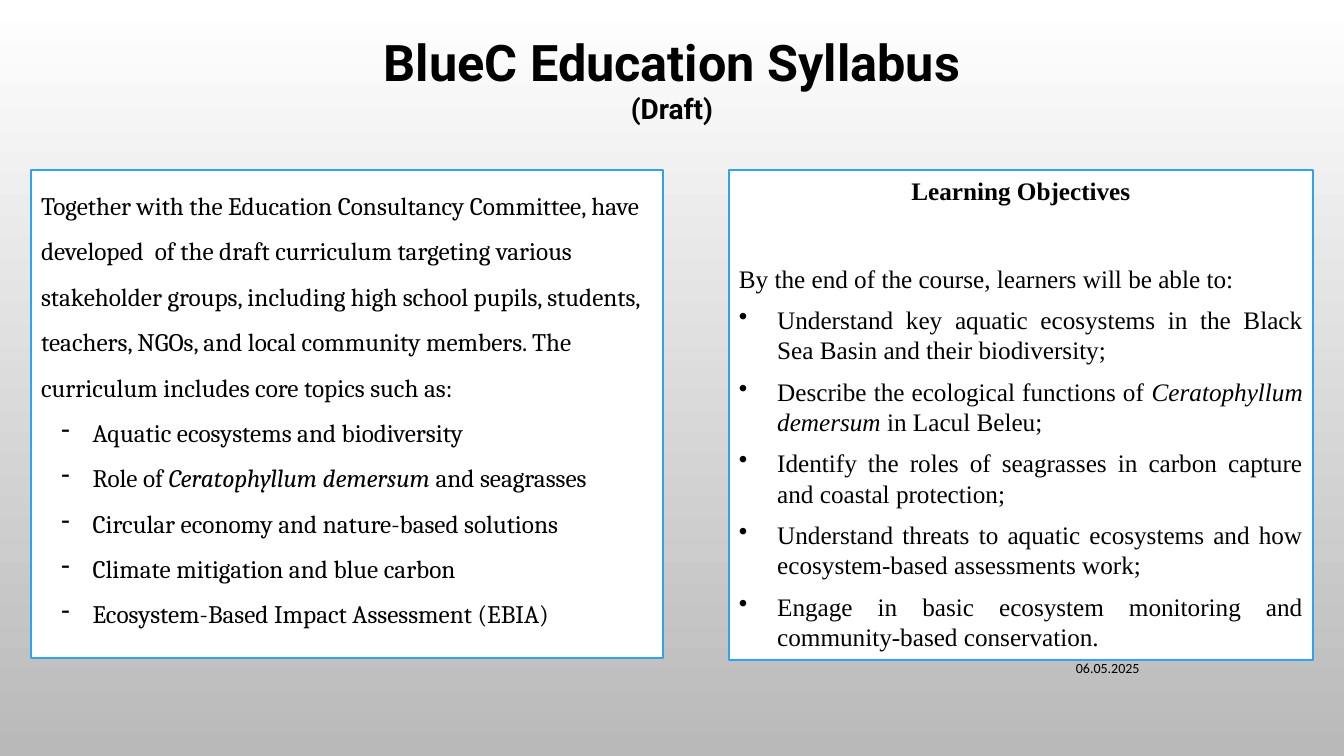
from lxml import etree
from pptx import Presentation
from pptx import util as u
from pptx.dml.color import RGBColor
from pptx.enum import shapes, text
from pptx.oxml.ns import qn

ALIGN = text.PP_ALIGN
TOPICS = [
    "Aquatic ecosystems and biodiversity",
    "Role of *Ceratophyllum demersum* and seagrasses",
    "Circular economy and nature-based solutions",
    "Climate mitigation and blue carbon",
    "Ecosystem-Based Impact Assessment (EBIA)",
]
OBJECTIVES = [
    "Understand key aquatic ecosystems in the Black Sea Basin and their biodiversity;",
    "Describe the ecological functions of *Ceratophyllum demersum* in Lacul Beleu;",
    "Identify the roles of seagrasses in carbon capture and coastal protection;",
    "Understand threats to aquatic ecosystems and how ecosystem-based assessments work;",
    "Engage in basic ecosystem monitoring and community-based conservation.",
]


def color(value):
    return RGBColor.from_string(value)


def place(left, top, width, height):
    return [u.Inches(length) for length in (left, top, width, height)]


def set_background(page, top, bottom):
    fill = page.background.fill
    fill.gradient()
    fill.gradient_angle = 270
    for stop, position, value in zip(fill.gradient_stops, (0, 1), (top, bottom)):
        stop.position = position
        stop.color.rgb = color(value)


def set_font(font, name, size, bold=False):
    font.name = name
    font.size = u.Pt(size)
    font.bold = bold
    font.color.rgb = color("000000")


def add_text_box(page, position, anchor=text.MSO_ANCHOR.TOP):
    frame = page.shapes.add_textbox(*place(*position)).text_frame
    frame.word_wrap = True
    frame.vertical_anchor = anchor
    return frame


def add_panel(page, position):
    panel = page.shapes.add_shape(shapes.MSO_SHAPE.RECTANGLE, *place(*position))
    panel.shadow.inherit = False
    panel.fill.solid()
    panel.fill.fore_color.rgb = color("FFFFFF")
    panel.line.color.rgb = color("2FA3EE")
    panel.line.width = u.Pt(1.25)
    frame = panel.text_frame
    frame.word_wrap = True
    frame.vertical_anchor = text.MSO_ANCHOR.TOP
    return frame


def add_para(frame, words, font, align=ALIGN.LEFT, size=18, bold=False,
             spacing=None, after=0, bullet=None, left=0, hanging=0):
    """Add a paragraph; words between asterisks are italic."""
    first = frame.paragraphs[0]
    para = frame.add_paragraph() if first.runs else first
    para.alignment = align
    para.line_spacing = spacing
    para.space_after = u.Pt(after)
    if bullet:
        props = para._p.get_or_add_pPr()
        props.set("marL", str(u.Inches(left)))
        props.set("indent", str(-u.Inches(hanging)))
        etree.SubElement(props, qn("a:buChar"), char=bullet)
    set_font(para.font, font, size, bold)
    for index, part in enumerate(words.split("*")):
        span = para.add_run()
        span.text = part
        if index % 2:
            span.font.italic = True


def add_title(page):
    para = add_text_box(page, (3.33, 0.26, 6.67, 1.04)).paragraphs[0]
    para.alignment = ALIGN.CENTER
    for words, size in (("BlueC Education Syllabus ", 36), ("(Draft)", 20)):
        span = para.add_run()
        span.text = words
        set_font(span.font, "Roboto", size, bold=True)


def add_topics(page):
    frame = add_panel(page, (0.31, 1.69, 6.27, 4.84))
    add_para(frame, "Together with the Education Consultancy Committee, have developed  of "
             "the draft curriculum targeting various stakeholder groups, including high "
             "school pupils, students, teachers, NGOs, and local community members. The "
             "curriculum includes core topics such as:", "Cambria", spacing=1.5)
    for topic in TOPICS:
        add_para(frame, topic, "Cambria", spacing=1.5, bullet="-", left=0.51, hanging=0.31)


def add_objectives(page):
    frame = add_panel(page, (7.23, 1.69, 5.79, 4.86))
    font = "Times New Roman"
    add_para(frame, "Learning Objectives", font, ALIGN.CENTER, bold=True, after=41)
    add_para(frame, "By the end of the course, learners will be able to:", font,
             ALIGN.JUSTIFY, after=8)
    for objective in OBJECTIVES:
        add_para(frame, objective, font, ALIGN.JUSTIFY, after=8,
                 bullet="•", left=0.38, hanging=0.38)


def main():
    deck = Presentation()
    deck.slide_width, deck.slide_height = u.Inches(13.33), u.Inches(7.5)
    page = deck.slides.add_slide(deck.slide_layouts[6])
    set_background(page, "FFFFFF", "B9B9B9")

    # Date and title
    date = add_text_box(page, (8.4, 6.43, 3, 0.4), text.MSO_ANCHOR.MIDDLE)
    add_para(date, "06.05.2025", "Calibri", ALIGN.RIGHT, size=10)
    add_title(page)

    # Panels
    add_topics(page)
    add_objectives(page)
    deck.save("out.pptx")


if __name__ == "__main__":
    main()
